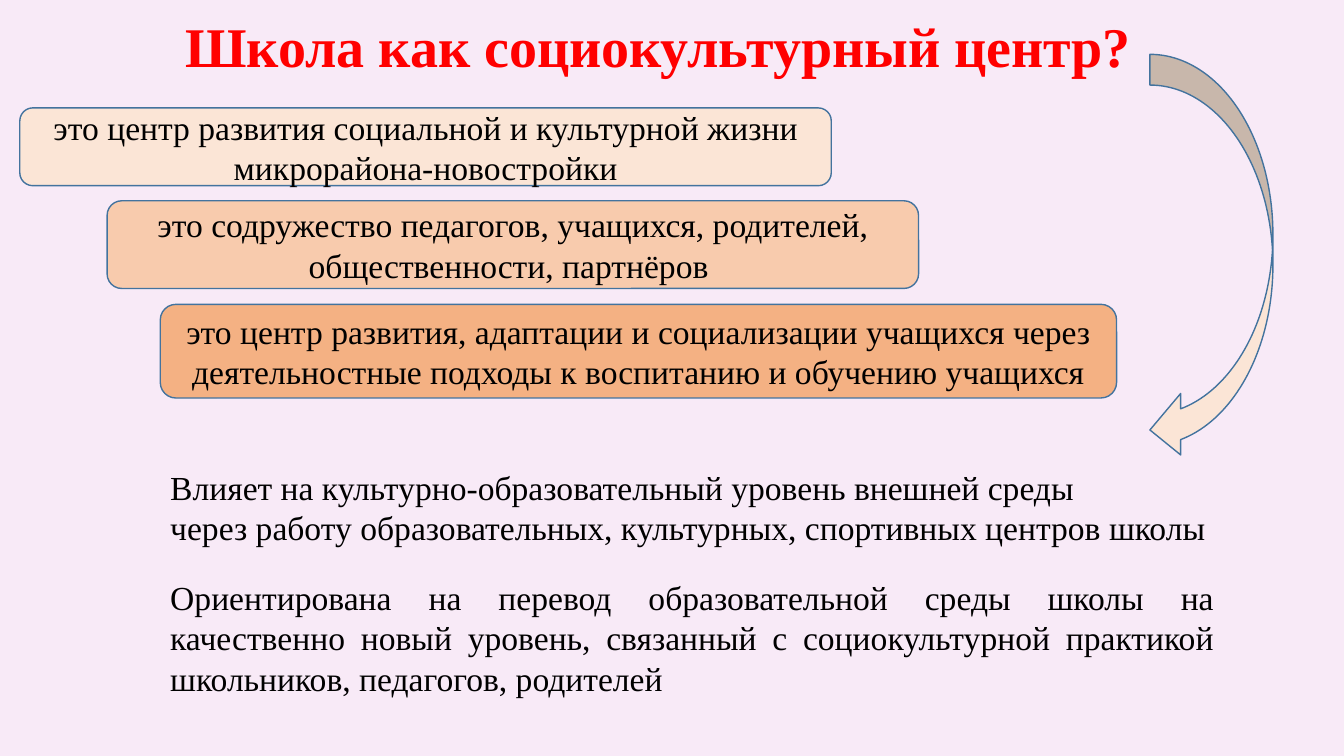
from pptx import Presentation
from pptx.dml.color import RGBColor
from pptx.enum.shapes import MSO_SHAPE as SHAPE
from pptx.enum.text import MSO_ANCHOR as ANCHOR, PP_ALIGN as ALIGN
from pptx.util import Cm, Pt


def color(hex_value):
    return RGBColor.from_string(hex_value)


def write(s, text, align, size=24, hex_value="000000", bold=False, wrap=True):
    """Fill a shape with text, one paragraph per line, and return its frame."""
    tf = s.text_frame
    tf.text = text
    tf.word_wrap = wrap
    for p in tf.paragraphs:
        p.alignment = align
        for r in p.runs:
            r.font.name = "Times New Roman"
            r.font.size = Pt(size)
            r.font.bold = bold
            r.font.color.rgb = color(hex_value)
    return tf


prs = Presentation()
prs.slide_width, prs.slide_height = Cm(33.87), Cm(19.05)
slide = prs.slides.add_slide(prs.slide_layouts[6])
slide.background.fill.solid()
slide.background.fill.fore_color.rgb = color("F8EAF7")
shapes = slide.shapes

# Title
title = shapes.add_textbox(Cm(1.98), Cm(0.4), Cm(29.21), Cm(1.7))
tf = write(title, "Школа как социокультурный центр?", ALIGN.CENTER, 40, "FF0000", True)
tf.vertical_anchor = ANCHOR.MIDDLE
tf.paragraphs[0].line_spacing = 0.9

# Conclusions under the steps
influence = shapes.add_textbox(Cm(4.04), Cm(11.63), Cm(27.33), Cm(2.31))
write(influence,
      "Влияет на культурно-образовательный уровень внешней среды\n"
      "через работу образовательных, культурных, спортивных центров школы",
      ALIGN.LEFT, wrap=False)
orientation = shapes.add_textbox(Cm(4.04), Cm(14.41), Cm(26.8), Cm(3.33))
write(orientation,
      "Ориентирована на перевод образовательной среды школы на качественно новый "
      "уровень, связанный с социокультурной практикой школьников, педагогов, родителей",
      ALIGN.JUSTIFY)

# Curved arrow and steps: shape, left, top, width, height, fill, text
blocks = [
    (SHAPE.CURVED_LEFT_ARROW, 28.98, 1.37, 3.1, 10.24, "FBE5D6", ""),
    (SHAPE.ROUNDED_RECTANGLE, 0.5, 2.72, 20.45, 1.96, "FBE5D6",
     "это центр развития социальной и культурной жизни микрорайона-новостройки"),
    (SHAPE.ROUNDED_RECTANGLE, 2.7, 5.06, 20.45, 2.21, "F8CBAD",
     "это содружество педагогов, учащихся, родителей, общественности, партнёров "),
    (SHAPE.ROUNDED_RECTANGLE, 4.04, 7.67, 24.1, 2.36, "F4B183",
     "это центр развития, адаптации и социализации учащихся через "
     "деятельностные подходы к воспитанию и обучению учащихся"),
]
for kind, left, top, width, height, fill, text in blocks:
    s = shapes.add_shape(kind, Cm(left), Cm(top), Cm(width), Cm(height))
    s.shadow.inherit = False
    s.fill.solid()
    s.fill.fore_color.rgb = color(fill)
    s.line.color.rgb = color("43739E")
    s.line.width = Pt(1)
    if text:
        tf = write(s, text, ALIGN.CENTER)
        tf.vertical_anchor = ANCHOR.MIDDLE
        tf.margin_top = tf.margin_bottom = 0

prs.save("out.pptx")
